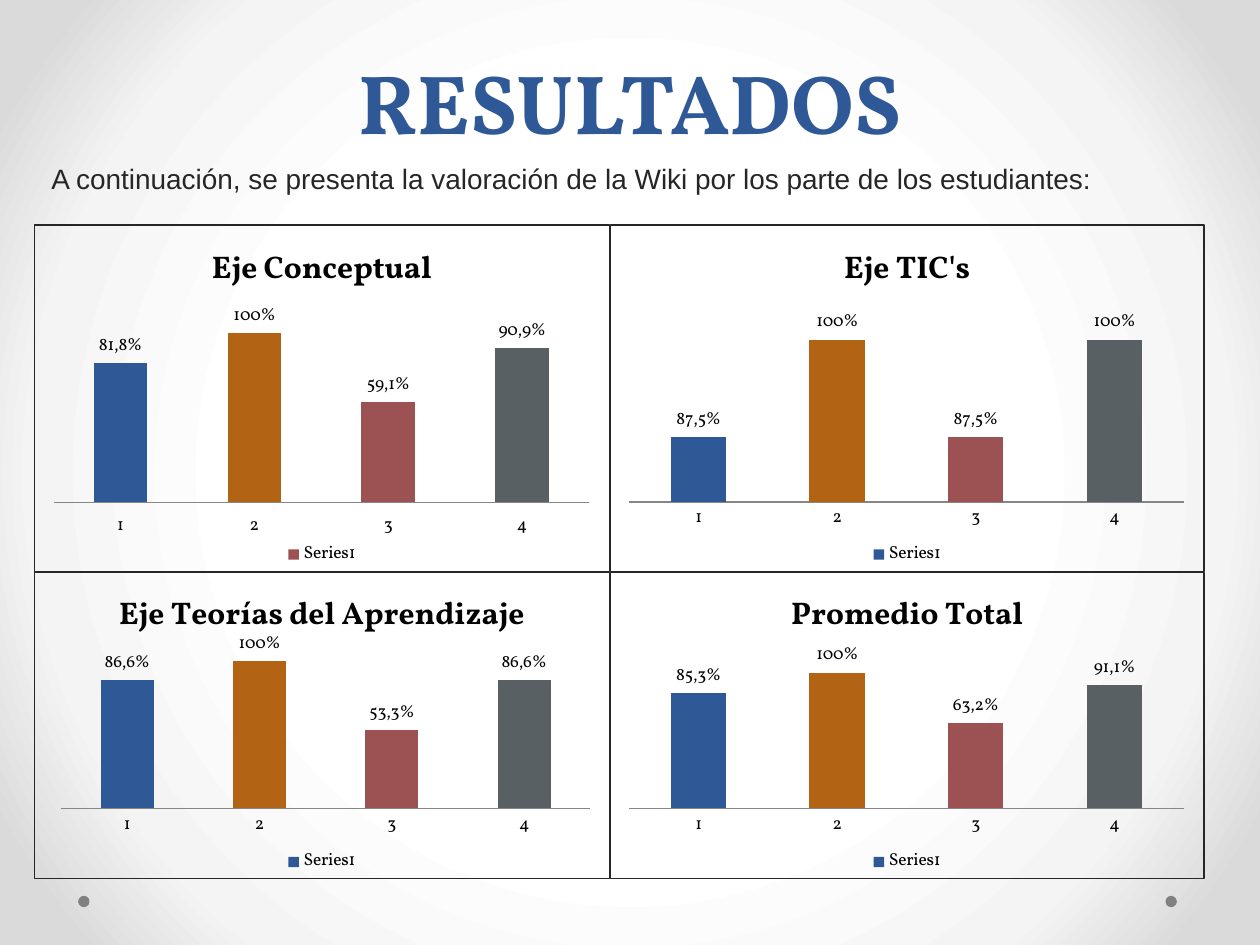
from dataclasses import dataclass
from pptx import Presentation
from pptx.chart.data import CategoryChartData as Data
from pptx.dml.color import RGBColor as Rgb
from pptx.enum.chart import XL_CHART_TYPE as Kind, XL_LABEL_POSITION as Spot
from pptx.enum.chart import XL_LEGEND_POSITION as Side, XL_TICK_MARK as Tick
from pptx.enum.chart import XL_TICK_LABEL_POSITION as Place
from pptx.enum.shapes import MSO_SHAPE as Shape
from pptx.enum.text import MSO_ANCHOR as Anchor, PP_ALIGN as Align
from pptx.oxml import parse_xml as make
from pptx.oxml.ns import nsdecls, qn
from pptx.util import Inches, Pt


@dataclass(frozen=True)
class Theme:
    blue: str = "2F5897"
    orange: str = "B26314"
    red: str = "9C5252"
    slate: str = "586064"
    ink: str = "262626"
    black: str = "000000"
    gray: str = "808080"
    axis: str = "868686"
    serif: str = "Vollkorn"
    sans: str = "Arial"
    title: int = 48
    body: int = 16
    head: int = 18
    small: int = 10


T = Theme()
BARS = (T.blue, T.orange, T.red, T.slate)


def style(font, size, color=T.black, face=T.serif, bold=False):
    font.size, font.name, font.bold = Pt(size), face, bold
    font.color.rgb = Rgb.from_string(color)


def write(frame, text, align=Align.CENTER, space=None, anchor=Anchor.TOP, **look):
    frame.word_wrap = True
    frame.vertical_anchor = anchor
    para = frame.paragraphs[0]
    para.alignment = align
    if space:
        para.line_spacing = Pt(space)
    run = para.add_run()
    run.text = text
    style(run.font, **look)


def paint(slide):
    stops = "".join(
        f'<a:gs pos="{pos}000"><a:srgbClr val="{color}"/></a:gs>'
        for pos, color in ((50, "FFFFFF"), (76, "F4F4F4"), (92, "DADADA")))
    slide.background.fill.solid()
    solid = slide.element.find(".//" + qn("p:bgPr")).find(qn("a:solidFill"))
    solid.getparent().replace(solid, make(
        f'<a:gradFill {nsdecls("a")} rotWithShape="1"><a:gsLst>{stops}</a:gsLst>'
        '<a:path path="circle"><a:fillToRect l="50000" t="50000" r="50000" '
        'b="50000"/></a:path></a:gradFill>'))


def draw_dots(slide, left, top, gap):
    size = Inches(0.09)
    for x in (left, left + gap):
        dot = slide.shapes.add_shape(Shape.OVAL, Inches(x), Inches(top), size, size)
        dot.shadow.inherit = False
        dot.fill.solid()
        dot.fill.fore_color.rgb = Rgb.from_string(T.gray)
        dot.line.fill.background()


def draw_text(slide, box, text, **look):
    shape = slide.shapes.add_textbox(*map(Inches, box))
    write(shape.text_frame, text, **look)


def frame_chart(chart, plot, wide, high):
    area = chart.element.find(".//" + qn("c:plotArea"))
    for old in area.findall(qn("c:layout")):
        area.remove(old)
    sizes = "".join(f'<c:{key} val="{part / whole}"/>' for key, part, whole
                    in zip("xywh", plot, (wide, high) * 2))
    area.insert(0, make(
        f'<c:layout {nsdecls("c")}><c:manualLayout><c:layoutTarget val="inner"/>'
        '<c:xMode val="edge"/><c:yMode val="edge"/>'
        f'{sizes}</c:manualLayout></c:layout>'))
    chart.element.find(qn("c:chart")).addnext(make(
        f'<c:spPr {nsdecls("c", "a")}><a:noFill/><a:ln w="{Pt(0.75)}"><a:solidFill>'
        f'<a:srgbClr val="{T.ink}"/></a:solidFill></a:ln></c:spPr>'))


def draw_chart(slide, box, title, vals, plot, base=T.blue, low=0, high=1.2,
               place=Place.NEXT_TO_AXIS):
    data = Data()
    data.categories = ["1", "2", "3", "4"]
    data.add_series("Series1", [round(val) / 100 for val in vals])
    chart = slide.shapes.add_chart(
        Kind.COLUMN_CLUSTERED, *map(Inches, box), data).chart
    style(chart.font, T.small)
    frame_chart(chart, plot, *box[2:])
    chart.has_title = True
    write(chart.chart_title.text_frame, title, size=T.head, bold=True)
    chart.has_legend = True
    chart.legend.position = Side.BOTTOM
    chart.legend.include_in_layout = False

    axis = chart.value_axis
    axis.visible = axis.has_major_gridlines = False
    axis.minimum_scale, axis.maximum_scale = low, high
    cats = chart.category_axis
    cats.major_tick_mark = cats.minor_tick_mark = Tick.NONE
    cats.tick_label_position = place
    cats.format.line.color.rgb = Rgb.from_string(T.axis)
    cats.format.line.width = Pt(0.75)

    group = chart.plots[0]
    group.gap_width, group.overlap = 150, -25
    group.vary_by_categories = False
    bars = group.series[0]
    bars.format.fill.solid()
    bars.format.fill.fore_color.rgb = Rgb.from_string(base)
    tags = bars.data_labels
    tags.show_value = True
    tags.number_format, tags.number_format_is_linked = "0%", False
    tags.position = Spot.OUTSIDE_END
    style(tags.font, T.small)
    for at, (val, color) in enumerate(zip(vals, BARS)):
        point = bars.points[at]
        if color != base:
            point.format.fill.solid()
            point.format.fill.fore_color.rgb = Rgb.from_string(color)
        if val != 100:
            tag = point.data_label
            write(tag.text_frame, f"{val}%".replace(".", ","), size=T.small)
            tag.position = Spot.OUTSIDE_END


def draw_grid(slide, left, top, widths, heights):
    charts = (
        ("Eje Conceptual", (81.8, 100, 59.1, 90.9), (0.15, 0.59, 4.26, 1.62),
         dict(base=T.red, place=Place.LOW)),
        ("Eje TIC's", (87.5, 100, 87.5, 100), (0.15, 0.59, 4.41, 1.62),
         dict(low=0.8, high=1.05)),
        ("Eje Teorías del Aprendizaje", (86.6, 100, 53.3, 86.6),
         (0.21, 0.47, 4.21, 1.41), {}),
        ("Promedio Total", (85.3, 100, 63.2, 91.1), (0.15, 0.58, 4.41, 1.3), {}),
    )
    for at, (title, vals, plot, extra) in enumerate(charts):
        row, col = divmod(at, 2)
        box = (left + sum(widths[:col]), top + sum(heights[:row]),
               widths[col], heights[row])
        draw_chart(slide, box, title, vals, plot, **extra)


def main():
    deck = Presentation()
    deck.slide_width, deck.slide_height = Inches(10), Inches(7.5)
    slide = deck.slides.add_slide(deck.slide_layouts[6])
    paint(slide)
    draw_dots(slide, 0.62, 7.11, 8.63)
    draw_text(slide, (0.5, -0.5, 9, 1.75), "RESULTADOS", space=58,
              anchor=Anchor.BOTTOM, size=T.title, color=T.blue, bold=True)
    draw_grid(slide, 0.27, 1.78, (4.57, 4.72), (2.76, 2.44))
    draw_text(slide, (0.31, 1.23, 9.37, 0.37),
              "A continuación, se presenta la valoración de la Wiki por los parte "
              "de los estudiantes:", align=Align.JUSTIFY, size=T.body,
              color=T.ink, face=T.sans)
    deck.save("out.pptx")


if __name__ == "__main__":
    main()
